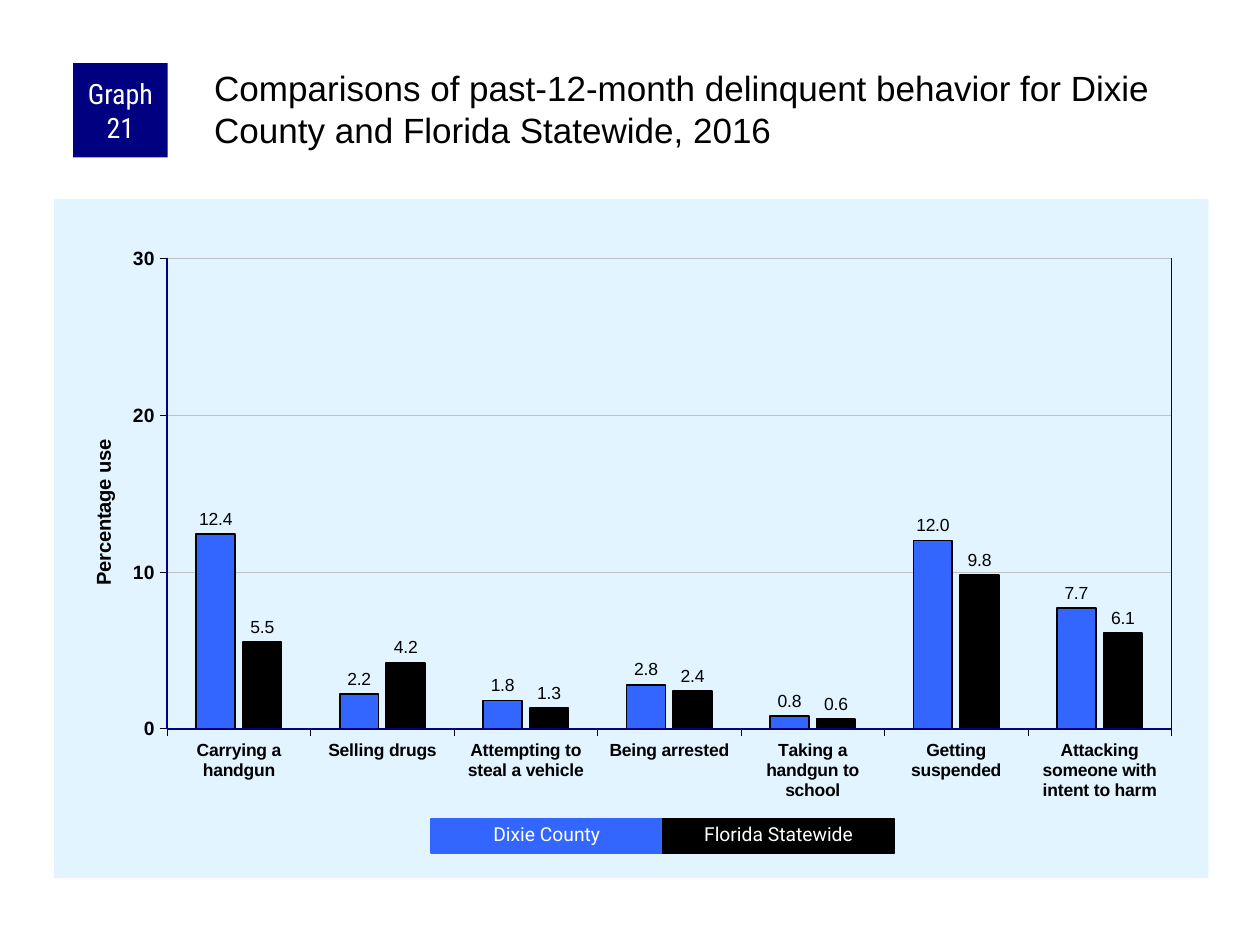
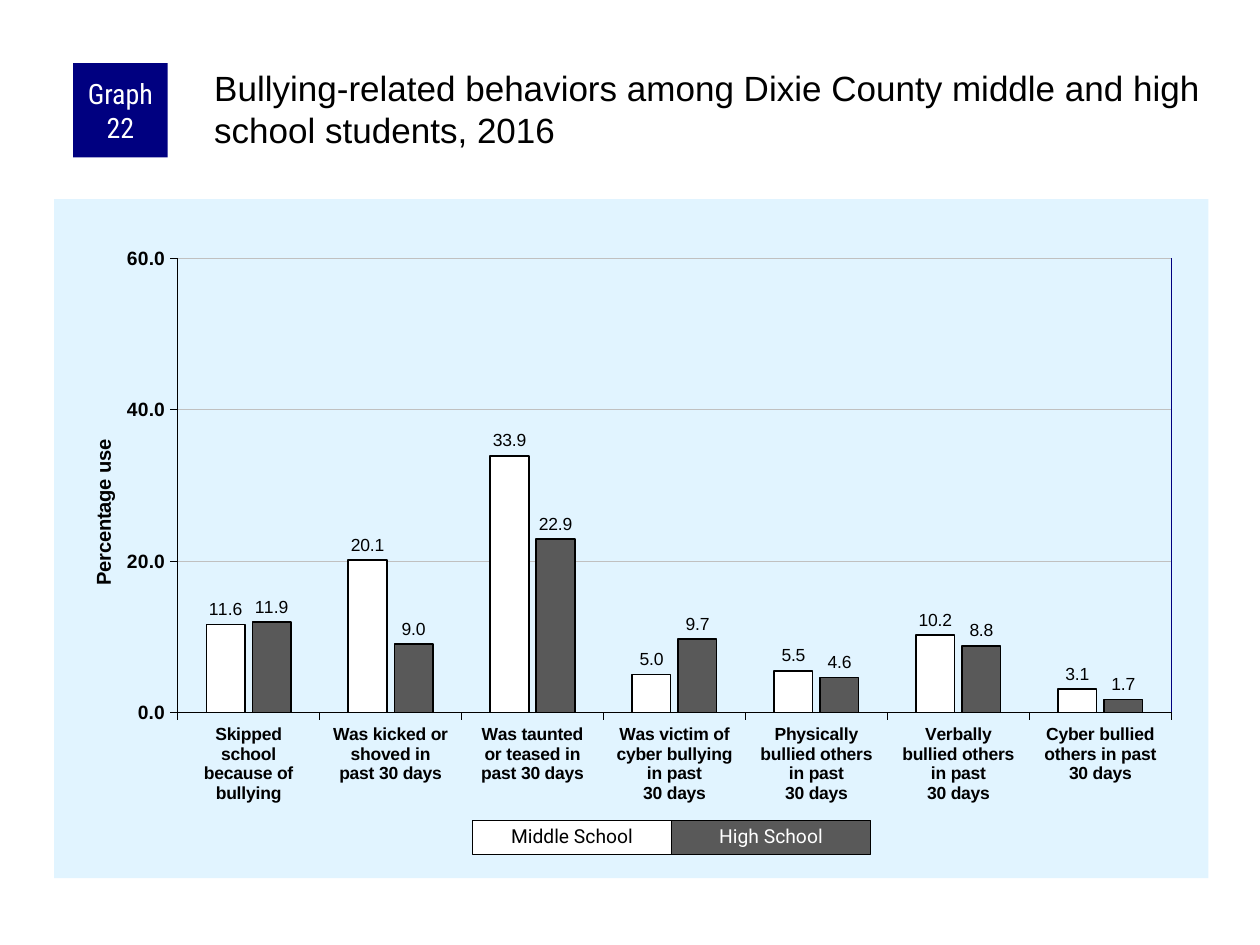
"""Builds two county survey slides, each with a clustered column chart."""
from pptx import Presentation
from pptx import util as u
from pptx.chart.data import CategoryChartData
from pptx.dml.color import RGBColor
from pptx.enum import chart as charts, shapes, text
from pptx.oxml import parse_xml
from pptx.oxml.ns import nsdecls

COLORS = {
    "black": "000000", "white": "FFFFFF", "navy": "000080", "panel": "E1F4FF",
    "grid": "C0C0C0", "blue": "3366FF", "gray": "595959",
}
PANEL = (0.43, 1.58, 9.16, 5.39)

GRAPHS = [
    {
        "badge": "Graph 21",
        "title": "Comparisons of past-12-month delinquent behavior for Dixie County "
                 "and Florida Statewide, 2016",
        "categories": ["Carrying a handgun", "Selling drugs", "Attempting to steal a vehicle",
                       "Being arrested", "Taking a handgun to school", "Getting suspended",
                       "Attacking someone with intent to harm"],
        "groups": [
            ("Dixie County", (12.4, 2.2, 1.8, 2.8, 0.8, 12.0, 7.7), "blue", "blue", "white"),
            ("Florida Statewide", (5.5, 4.2, 1.3, 2.4, 0.6, 9.8, 6.1), "black", "black", "white"),
        ],
        "scale": (30, 10, "0"),
        "plot": (0.098, 0.087, 0.87, 0.693),
        "navy_edges": ("left", "bottom", "right"),
        "key": (3.42, 6.5, 1.84),
    },
    {
        "badge": "Graph 22",
        "title": "Bullying-related behaviors among Dixie County middle and high school "
                 "students, 2016",
        "categories": ["Skipped\nschool\nbecause of\nbullying",
                       "Was kicked or\nshoved in\npast 30 days",
                       "Was taunted\nor teased in\npast 30 days",
                       "Was victim of\ncyber bullying\nin past\n30 days",
                       "Physically\nbullied others\nin past\n30 days",
                       "Verbally\nbullied others\nin past\n30 days",
                       "Cyber bullied\nothers in past\n30 days"],
        "groups": [
            ("Middle School", (11.6, 20.1, 33.9, 5.0, 5.5, 10.2, 3.1), "white", "black", "black"),
            ("High School", (11.9, 9.0, 22.9, 9.7, 4.6, 8.8, 1.7), "gray", "black", "white"),
        ],
        "scale": (60, 20, "0.0"),
        "plot": (0.107, 0.087, 0.861, 0.669),
        "navy_edges": ("right",),
        "key": (3.75, 6.51, 1.58),
    },
]


def rgb(name):
    """Return the named colour."""
    return RGBColor.from_string(COLORS[name])


def set_font(font, size, color="black", name="Arial", bold=False):
    """Set the face, size, colour and weight of a font."""
    font.name, font.size, font.bold = name, u.Pt(size), bold
    font.color.rgb = rgb(color)


def set_line(line, color, width):
    """Give a line a colour and a width in points."""
    line.color.rgb = rgb(color)
    line.width = u.Pt(width)


def add_title(slide, words):
    """Write the heading in the title placeholder."""
    title = slide.shapes.title
    title.left, title.top, title.width, title.height = map(u.Inches, (1.67, 0.5, 7.92, 0.83))
    frame = title.text_frame
    frame.text = words
    frame.word_wrap = True
    frame.auto_size = text.MSO_AUTO_SIZE.NONE
    frame.vertical_anchor = text.MSO_ANCHOR.TOP
    frame.margin_left = frame.margin_top = u.Inches(0.03)
    frame.margin_right = frame.margin_bottom = 0
    paragraph = frame.paragraphs[0]
    paragraph.alignment = text.PP_ALIGN.LEFT
    set_font(paragraph.font, 20)


def add_box(slide, box, words, fill, color, size, face):
    """Add a filled rectangle with centred words and no outline."""
    shape = slide.shapes.add_shape(shapes.MSO_SHAPE.RECTANGLE, *map(u.Inches, box))
    shape.shadow.inherit = False
    shape.fill.solid()
    shape.fill.fore_color.rgb = rgb(fill)
    shape.line.fill.background()
    shape.text_frame.text = words
    paragraph = shape.text_frame.paragraphs[0]
    paragraph.alignment = text.PP_ALIGN.CENTER
    set_font(paragraph.font, size, color, face)
    return shape


def add_badge(slide, words):
    """Add the square with the graph number."""
    frame = add_box(slide, (0.58, 0.5, 0.75, 0.75), words, "navy", "white", 16,
                    "Roboto Condensed").text_frame
    frame.margin_left = frame.margin_right = u.Inches(0.05)
    frame.margin_top = frame.margin_bottom = 0


def add_key(slide, left, top, width, groups):
    """Add one labelled colour box for each group, side by side."""
    for column, (name, _, fill, outline, color) in enumerate(groups):
        box = (left + column * width, top, width, 0.27)
        shape = add_box(slide, box, name, fill, color, 11, "Roboto")
        set_line(shape.line, outline, 0.75)
        shape.text_frame.vertical_anchor = text.MSO_ANCHOR.TOP
        shape.text_frame.paragraphs[0].line_spacing = 0.9


def set_layout(parent, index, **shares):
    """Place a chart part by shares of the chart's size."""
    for layout in parent.xpath("c:layout"):
        parent.remove(layout)
    target = '<c:layoutTarget val="inner"/>' if "w" in shares else ""
    modes = "".join(f'<c:{key}Mode val="edge"/>' for key in "xy")
    sizes = "".join(f'<c:{key} val="{share}"/>' for key, share in shares.items())
    parent.insert(index, parse_xml(
        f'<c:layout {nsdecls("c")}><c:manualLayout>{target}{modes}{sizes}'
        '</c:manualLayout></c:layout>'))


def format_axis(axis, size):
    """Give an axis its thin line, outer ticks and bold labels."""
    axis.major_tick_mark = charts.XL_TICK_MARK.OUTSIDE
    axis.minor_tick_mark = charts.XL_TICK_MARK.NONE
    set_font(axis.tick_labels.font, size, bold=True)
    set_line(axis.format.line, "black", 0.25)


def format_value_axis(axis, maximum, step, number_format):
    """Set the scale, gridlines and title of the value axis."""
    format_axis(axis, 11)
    axis.minimum_scale, axis.maximum_scale, axis.major_unit = 0, maximum, step
    axis.tick_labels.number_format = number_format
    axis.tick_labels.number_format_is_linked = False
    axis.has_major_gridlines = True
    set_line(axis.major_gridlines.format.line, "grid", 0.25)
    frame = axis.axis_title.text_frame
    frame.text = "Percentage use"
    set_font(frame.paragraphs[0].font, 11.5, bold=True)
    set_layout(axis.axis_title.element, 1, x=0.028, y=0.349)


def format_series(series, fill):
    """Give a series its fill, outline and value labels."""
    series.format.fill.solid()
    series.format.fill.fore_color.rgb = rgb(fill)
    series.invert_if_negative = False
    set_line(series.format.line, "black", 1)
    labels = series.data_labels
    labels.show_value = True
    labels.number_format, labels.number_format_is_linked = "0.0", False
    labels.position = charts.XL_LABEL_POSITION.OUTSIDE_END
    set_font(labels.font, 10)


def add_column_chart(slide, graph):
    """Add the clustered column chart on its pale panel."""
    data = CategoryChartData(number_format="0.0")
    data.categories = graph["categories"]
    for name, values, *_ in graph["groups"]:
        data.add_series(name, values)
    chart = slide.shapes.add_chart(charts.XL_CHART_TYPE.COLUMN_CLUSTERED,
                                   *map(u.Inches, PANEL), data).chart
    chart.has_title = chart.has_legend = False
    set_font(chart.font, 11.5)
    chart.element.xpath("c:chart")[0].addnext(parse_xml(
        f'<c:spPr {nsdecls("c", "a")}><a:solidFill><a:srgbClr val="{COLORS["panel"]}"/>'
        '</a:solidFill><a:ln><a:noFill/></a:ln></c:spPr>'))
    set_layout(chart.element.xpath("c:chart/c:plotArea")[0], 0, **dict(zip("xywh", graph["plot"])))
    format_axis(chart.category_axis, 10)
    format_value_axis(chart.value_axis, *graph["scale"])
    plot = chart.plots[0]
    plot.gap_width, plot.overlap, plot.vary_by_categories = 150, -20, False
    for series, group in zip(plot.series, graph["groups"]):
        format_series(series, group[2])


def add_plot_edges(slide, plot, edges):
    """Draw navy lines along the given edges of the plot area."""
    left, top, width, height = PANEL
    x1, y1 = left + plot[0] * width, top + plot[1] * height
    x2, y2 = x1 + plot[2] * width, y1 + plot[3] * height
    ends = {"left": (x1, y1, x1, y2), "bottom": (x1, y2, x2, y2), "right": (x2, y1, x2, y2)}
    for edge in edges:
        connector = slide.shapes.add_connector(shapes.MSO_CONNECTOR.STRAIGHT,
                                               *map(u.Inches, ends[edge]))
        set_line(connector.line, "navy", 1)
        connector.element.spPr.append(parse_xml(f'<a:effectLst {nsdecls("a")}/>'))


def main():
    """Build and save the presentation."""
    presentation = Presentation()
    presentation.slide_width, presentation.slide_height = u.Inches(10), u.Inches(7.5)
    for graph in GRAPHS:
        slide = presentation.slides.add_slide(presentation.slide_layouts[5])
        add_column_chart(slide, graph)
        add_plot_edges(slide, graph["plot"], graph["navy_edges"])
        add_badge(slide, graph["badge"])
        add_title(slide, graph["title"])
        add_key(slide, *graph["key"], graph["groups"])
    presentation.save("out.pptx")


if __name__ == "__main__":
    main()
